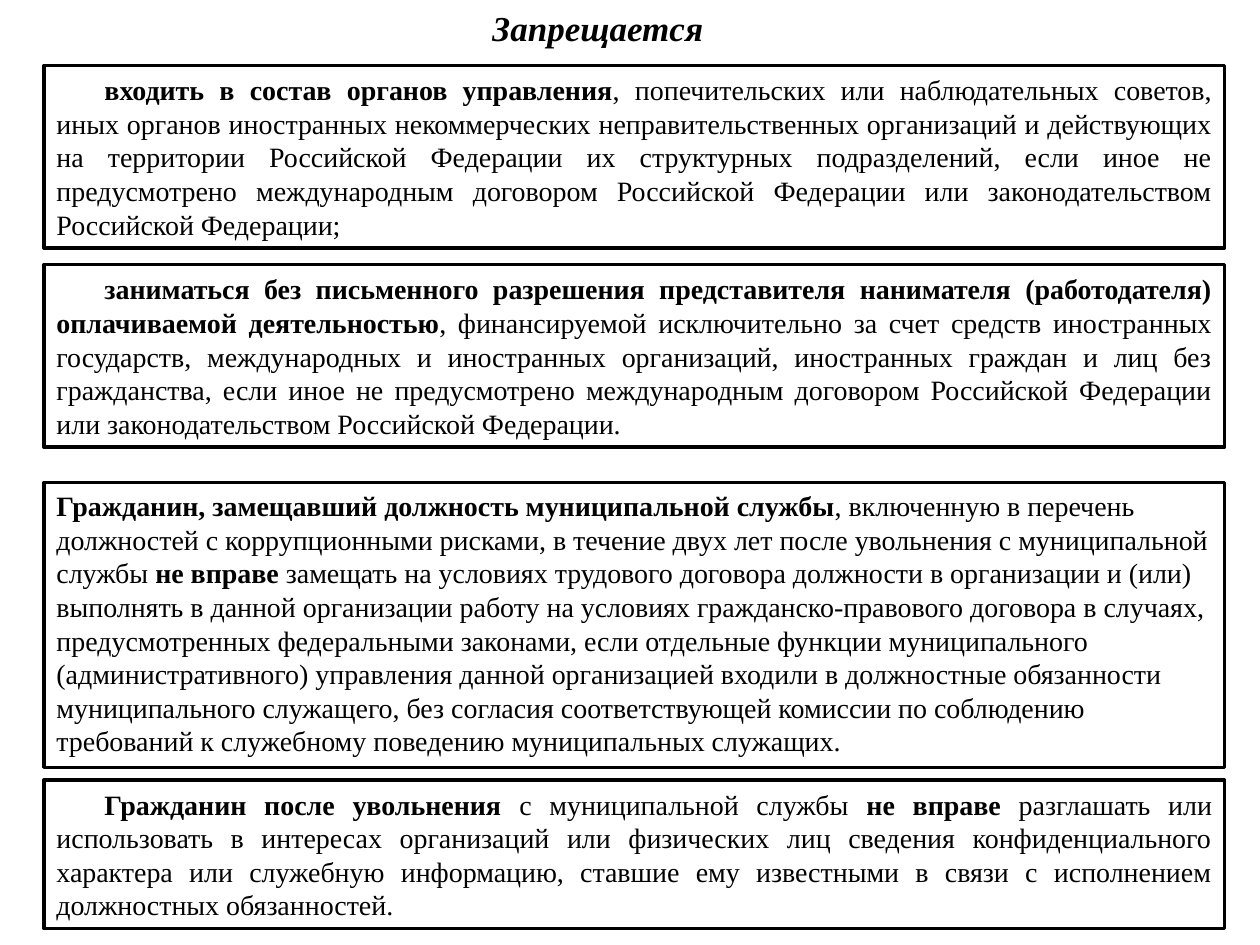
from pptx import Presentation
from pptx.dml.color import RGBColor
from pptx.enum.shapes import MSO_SHAPE
from pptx.enum.text import MSO_ANCHOR, MSO_AUTO_SIZE, PP_ALIGN
from pptx.util import Pt

FONT = "Times New Roman"
INK = "000000"
PAPER = "FFFFFF"
BOX_LEFT, BOX_WIDTH = 25.2, 674.6
FIRST_LINE_INDENT = 27.4

MANAGEMENT_BAN = [
    "входить в состав органов управления",
    ", попечительских или наблюдательных советов, иных органов иностранных "
    "некоммерческих неправительственных организаций и действующих на территории "
    "Российской Федерации их структурных подразделений, если иное не предусмотрено "
    "международным договором Российской Федерации или законодательством "
    "Российской Федерации;",
]
PAID_WORK_BAN = [
    "заниматься без письменного разрешения представителя нанимателя (работодателя) "
    "оплачиваемой деятельностью",
    ", финансируемой исключительно за счет средств иностранных государств, "
    "международных и иностранных организаций, иностранных граждан и лиц без "
    "гражданства, если иное не предусмотрено международным договором Российской "
    "Федерации или законодательством Российской Федерации.",
]
EMPLOYMENT_BAN = [
    "Гражданин, замещавший должность муниципальной службы",
    ", включенную в перечень должностей с коррупционными рисками, в течение двух лет "
    "после увольнения с муниципальной службы ",
    "не вправе ",
    "замещать на условиях трудового договора должности в организации и (или) "
    "выполнять в данной организации работу на условиях гражданско-правового договора "
    "в случаях, предусмотренных федеральными законами, если отдельные функции "
    "муниципального (административного) управления данной организацией входили в "
    "должностные обязанности муниципального служащего, без согласия соответствующей "
    "комиссии по соблюдению требований к служебному поведению муниципальных служащих.",
]
DISCLOSURE_BAN = [
    "Гражданин после увольнения ",
    "с муниципальной службы ",
    "не вправе ",
    "разглашать или использовать в интересах организаций или физических лиц сведения "
    "конфиденциального характера или служебную информацию, ставшие ему известными в "
    "связи с исполнением должностных обязанностей.",
]


def color(hex_value):
    """Turn a hex string into a colour."""
    return RGBColor.from_string(hex_value)


def set_font(font, size):
    """Apply the slide's typeface and ink at the given size."""
    font.name = FONT
    font.size = Pt(size)
    font.color.rgb = color(INK)


def place_heading(slide, text):
    """Move and format the title placeholder."""
    heading = slide.shapes.title
    heading.left, heading.top = Pt(273.6), Pt(0)
    heading.width, heading.height = Pt(136.1), Pt(31.7)
    frame = heading.text_frame
    frame.text = text
    frame.word_wrap = False
    frame.auto_size = MSO_AUTO_SIZE.SHAPE_TO_FIT_TEXT
    paragraph = frame.paragraphs[0]
    paragraph.alignment = PP_ALIGN.CENTER
    set_font(paragraph.font, 20)
    paragraph.font.bold = paragraph.font.italic = True


def add_rule_box(slide, top, height, phrases, justified=True):
    """Add a framed rule whose phrases alternate between bold and regular."""
    box = slide.shapes.add_shape(
        MSO_SHAPE.RECTANGLE, Pt(BOX_LEFT), Pt(top), Pt(BOX_WIDTH), Pt(height))
    box.shadow.inherit = False
    box.fill.solid()
    box.fill.fore_color.rgb = color(PAPER)
    box.line.color.rgb = color(INK)
    box.line.width = Pt(2)
    frame = box.text_frame
    frame.word_wrap = True
    frame.auto_size = MSO_AUTO_SIZE.SHAPE_TO_FIT_TEXT
    frame.vertical_anchor = MSO_ANCHOR.MIDDLE if justified else MSO_ANCHOR.TOP
    paragraph = frame.paragraphs[0]
    paragraph.alignment = PP_ALIGN.JUSTIFY if justified else PP_ALIGN.LEFT
    if justified:
        paragraph._p.get_or_add_pPr().set("indent", str(Pt(FIRST_LINE_INDENT)))
    set_font(paragraph.font, 16)
    for position, phrase in enumerate(phrases):
        run = paragraph.add_run()
        run.text = phrase
        run.font.bold = position % 2 == 0


def main():
    """Build the slide of prohibitions and save it."""
    deck = Presentation()
    deck.slide_width, deck.slide_height = Pt(720), Pt(540)
    slide = deck.slides.add_slide(deck.slide_layouts[5])
    place_heading(slide, "Запрещается")
    add_rule_box(slide, 37.4, 104.4, MANAGEMENT_BAN)
    add_rule_box(slide, 151.2, 104.4, PAID_WORK_BAN)
    add_rule_box(slide, 275.8, 162.7, EMPLOYMENT_BAN, justified=False)
    add_rule_box(slide, 445.7, 85, DISCLOSURE_BAN)
    deck.save("out.pptx")


if __name__ == "__main__":
    main()
